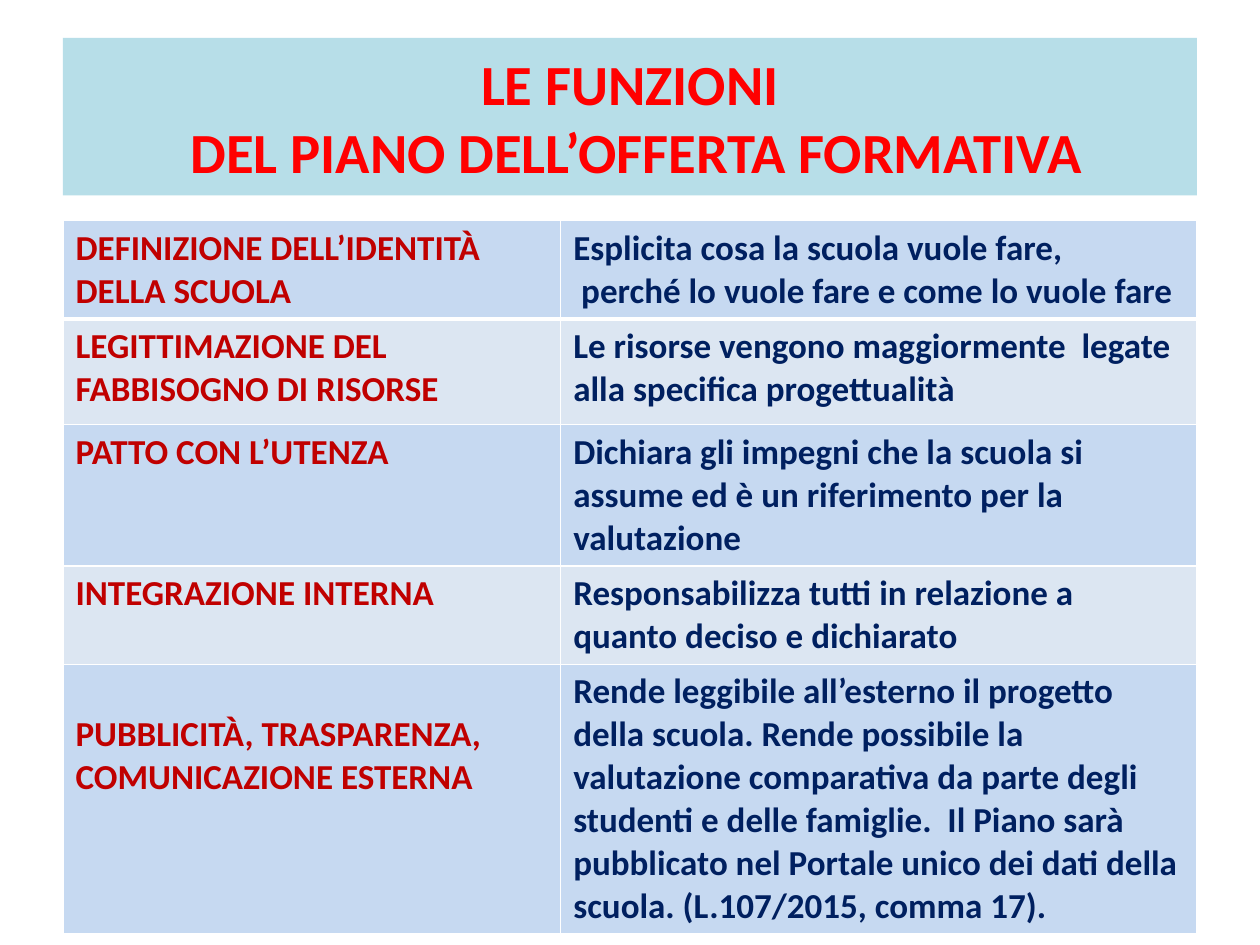
from lxml import etree
from pptx import Presentation
from pptx.dml.color import RGBColor
from pptx.enum.shapes import MSO_SHAPE
from pptx.enum.text import MSO_ANCHOR, PP_ALIGN
from pptx.oxml.ns import qn
from pptx.util import Inches, Pt

RECTANGLE = MSO_SHAPE.RECTANGLE
MIDDLE = MSO_ANCHOR.MIDDLE
CENTER = PP_ALIGN.CENTER

COLORS = {
    "banner": "B7DEE8",
    "title": "FF0000",
    "function": "C00000",
    "description": "002060",
    "odd_row": "C6D9F1",
    "even_row": "DCE6F2",
    "border": "FFFFFF",
}


def write_text(frame, text, size, color):
    frame.text = text
    for paragraph in frame.paragraphs:
        for run in paragraph.runs:
            font_format = {"name": "Calibri", "size": Pt(size), "bold": True}
            for attribute, value in font_format.items():
                setattr(run.font, attribute, value)
            run.font.color.rgb = RGBColor.from_string(COLORS[color])


def add_borders(cell, widths):
    properties = cell._tc.get_or_add_tcPr()
    for side, width in widths.items():
        line = etree.SubElement(properties, qn(f"a:ln{side}"), w=str(Pt(width)))
        fill = etree.SubElement(line, qn("a:solidFill"))
        etree.SubElement(fill, qn("a:srgbClr"), val=COLORS["border"])


prs = Presentation()
prs.slide_width, prs.slide_height = Inches(10), Inches(7.5)
slide = prs.slides.add_slide(prs.slide_layouts[6])

# Title banner
banner = slide.shapes.add_shape(
    RECTANGLE, Inches(0.5), Inches(0.3), Inches(9), Inches(1.25))
banner.shadow.inherit = False
banner.fill.solid()
banner.fill.fore_color.rgb = RGBColor.from_string(COLORS["banner"])
banner.line.fill.background()
write_text(banner.text_frame, "LE FUNZIONI\v DEL PIANO DELL’OFFERTA FORMATIVA",
           32.4, "title")
banner.text_frame.word_wrap = True
banner.text_frame.vertical_anchor = MIDDLE
banner.text_frame.paragraphs[0].alignment = CENTER

# Functions of the plan: row height, function, description
functions = [
    (0.78, "DEFINIZIONE DELL’IDENTITÀ\nDELLA SCUOLA",
     "Esplicita cosa la scuola vuole fare,\n perché lo vuole fare e come lo vuole fare"),
    (0.84, "LEGITTIMAZIONE DEL FABBISOGNO DI RISORSE",
     "Le risorse vengono maggiormente  legate alla specifica progettualità"),
    (1.12, "PATTO CON L’UTENZA",
     "Dichiara gli impegni che la scuola si assume ed è un riferimento per la valutazione"),
    (0.78, "INTEGRAZIONE INTERNA",
     "Responsabilizza tutti in relazione a quanto deciso e dichiarato"),
    (2.14, "PUBBLICITÀ, TRASPARENZA, COMUNICAZIONE ESTERNA",
     "Rende leggibile all’esterno il progetto della scuola. Rende possibile la "
     "valutazione comparativa da parte degli studenti e delle famiglie.  Il Piano sarà "
     "pubblicato nel Portale unico dei dati della scuola. (L.107/2015, comma 17)."),
]
total_height = sum(height for height, _, _ in functions)
table = slide.shapes.add_table(
    len(functions), 2, Inches(0.5), Inches(1.75), Inches(9), Inches(total_height)).table
table.first_row = table.horz_banding = False
for column, width in zip(table.columns, (3.95, 5.05)):
    column.width = Inches(width)

for index, (height, function, description) in enumerate(functions):
    table.rows[index].height = Inches(height)
    row_color = COLORS["even_row" if index % 2 else "odd_row"]
    # A thicker rule separates the first row from the rest
    widths = {"L": 1, "R": 1, "T": 3 if index == 1 else 1, "B": 3 if index == 0 else 1}
    texts = {"function": function, "description": description}
    for cell, (role, text) in zip(table.rows[index].cells, texts.items()):
        add_borders(cell, widths)
        cell.fill.solid()
        cell.fill.fore_color.rgb = RGBColor.from_string(row_color)
        write_text(cell.text_frame, text, 20, role)

# The last function starts one line lower
table.cell(len(functions) - 1, 0).margin_top = Inches(0.39)

prs.save("out.pptx")
